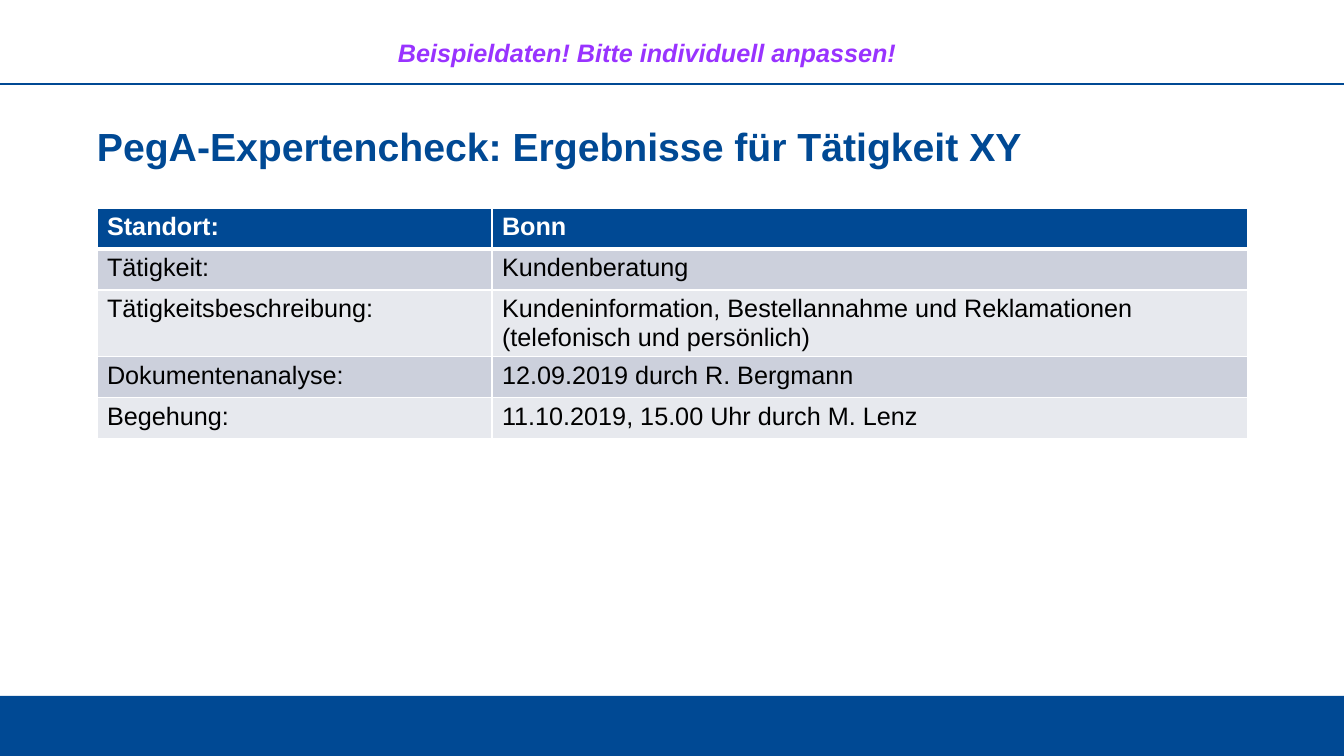
import pptx
import pptx.util
import pptx.dml.color
import pptx.enum.shapes
import pptx.enum.text
import pptx.oxml.ns
import lxml.etree

PX = 914400 / 100.8
THEME = {
    "blue": "004994", "purple": "9933FF", "white": "FFFFFF", "black": "000000",
    "bands": ["E7E9EE", "CCD0DC"],
    "font": "Arial", "title": 28, "body": 18,
}
rgb = pptx.dml.color.RGBColor.from_string
qn = pptx.oxml.ns.qn


def px(*lengths):
    return [round(length * PX) for length in lengths]


def write(frame, text, color, **formats):
    frame.text = text
    font = frame.paragraphs[0].runs[0].font
    font.color.rgb = rgb(color)
    values = {"name": THEME["font"], "size": pptx.util.Pt(THEME["body"])} | formats
    for attribute, value in values.items():
        setattr(font, attribute, value)


deck = pptx.Presentation()
deck.slide_width, deck.slide_height = px(1344, 756)
slide = deck.slides.add_slide(deck.slide_layouts[5])
shapes = slide.shapes

# Footer band
footer = shapes.add_shape(pptx.enum.shapes.MSO_SHAPE.RECTANGLE, *px(0, 696, 1344, 60))
footer.shadow.inherit = False
footer.fill.solid()
footer.fill.fore_color.rgb = rgb(THEME["blue"])
footer.line.fill.background()

# Header rule
rule = shapes.add_connector(pptx.enum.shapes.MSO_CONNECTOR.STRAIGHT, *px(0, 84, 1344, 84))
rule.line.color.rgb = rgb(THEME["blue"])
rule.line.width = pptx.util.Pt(2)
lxml.etree.SubElement(rule._element.spPr, qn("a:effectLst"))

# Title
title = shapes.title
title.left, title.top, title.width, title.height = px(97, 128, 1151, 57)
heading = title.text_frame
write(heading, "PegA-Expertencheck: Ergebnisse für Tätigkeit XY", THEME["blue"],
      size=pptx.util.Pt(THEME["title"]), bold=True)
margins = px(0, 0, 10, 5)
for side, margin in zip(("left", "top", "right", "bottom"), margins):
    setattr(heading, f"margin_{side}", margin)
heading.word_wrap = True
heading.auto_size = pptx.enum.text.MSO_AUTO_SIZE.NONE
heading.vertical_anchor = pptx.enum.text.MSO_ANCHOR.TOP
heading.paragraphs[0].alignment = pptx.enum.text.PP_ALIGN.LEFT
heading.paragraphs[0].line_spacing = 0.9

# Results table
results = [
    ("Standort:", "Bonn"),
    ("Tätigkeit:", "Kundenberatung"),
    ("Tätigkeitsbeschreibung:",
     "Kundeninformation, Bestellannahme und Reklamationen (telefonisch und persönlich)"),
    ("Dokumentenanalyse:", "12.09.2019 durch R. Bergmann"),
    ("Begehung:", "11.10.2019, 15.00 Uhr durch M. Lenz"),
]
table = shapes.add_table(len(results), 2, *px(97, 208, 1151, 205)).table
for column, width in zip(table.columns, px(395, 756)):
    column.width = width

for row, entries in enumerate(results):
    header = row == 0
    table.rows[row].height = px(41)[0]
    for column, entry in enumerate(entries):
        cell = table.cell(row, column)
        write(cell.text_frame, entry, THEME["white" if header else "black"], bold=header)
        # White cell borders, thicker around the header's lower edge
        properties = cell._tc.get_or_add_tcPr()
        for edge in ("L", "R", "T", "B"):
            thick = (row, edge) in ((0, "B"), (1, "T"))
            border = lxml.etree.SubElement(properties, qn(f"a:ln{edge}"),
                                           w=str(pptx.util.Pt(3 if thick else 1)))
            solid = lxml.etree.SubElement(border, qn("a:solidFill"))
            lxml.etree.SubElement(solid, qn("a:srgbClr"), val=THEME["white"])
        cell.fill.solid()
        cell.fill.fore_color.rgb = rgb(THEME["blue"] if header else THEME["bands"][row % 2])

# Sample data notice
notice = shapes.add_textbox(*px(388, 32, 532, 40)).text_frame
notice.word_wrap = True
notice.auto_size = pptx.enum.text.MSO_AUTO_SIZE.SHAPE_TO_FIT_TEXT
write(notice, "Beispieldaten! Bitte individuell anpassen!", THEME["purple"],
      bold=True, italic=True)

deck.save("out.pptx")
